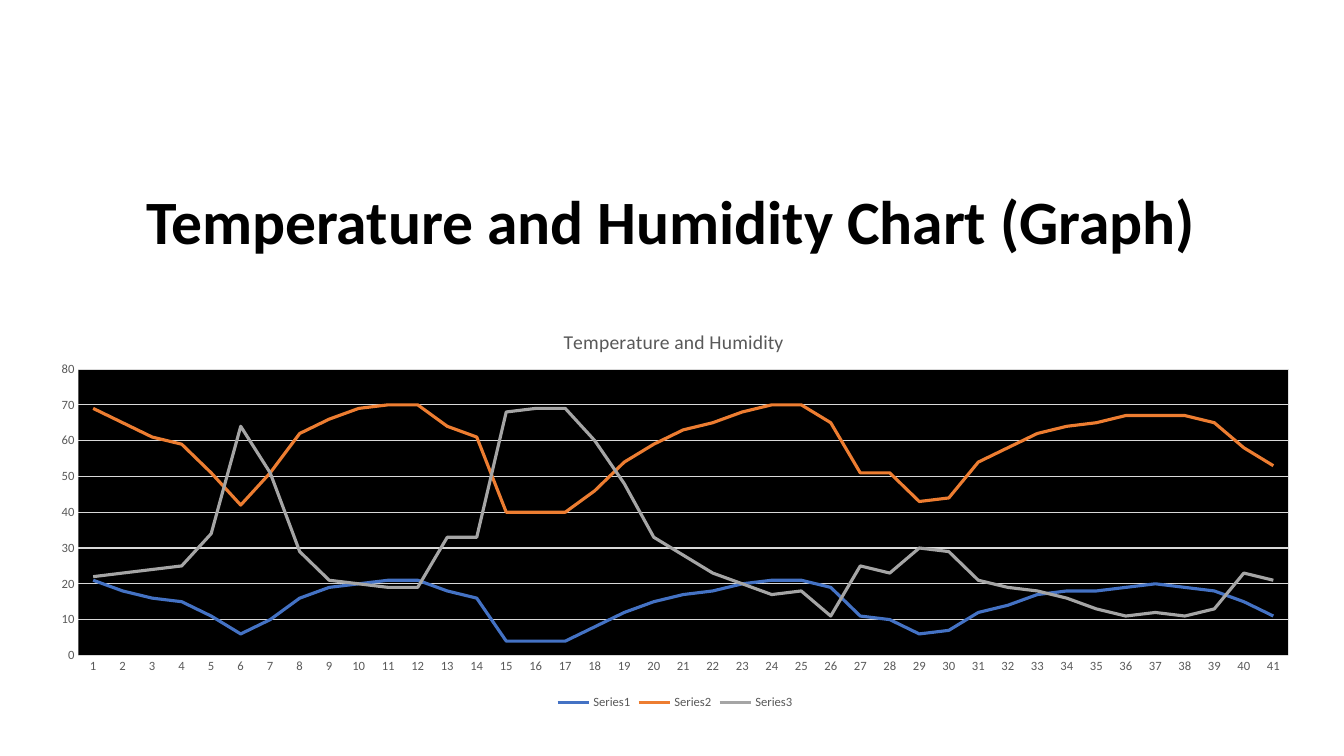
"""Build the temperature and humidity chart slide."""
from dataclasses import dataclass

from lxml import etree
from pptx import Presentation
from pptx.chart.data import CategoryChartData
from pptx.dml.color import RGBColor
from pptx.enum.chart import XL_CHART_TYPE, XL_LEGEND_POSITION, XL_TICK_MARK
from pptx.enum.text import MSO_ANCHOR, PP_ALIGN
from pptx.oxml import parse_xml
from pptx.oxml.ns import nsdecls, qn
from pptx.util import Inches, Pt

LINE_CHART = XL_CHART_TYPE.LINE
LEGEND_BOTTOM = XL_LEGEND_POSITION.BOTTOM
NO_TICK = XL_TICK_MARK.NONE
BOTTOM = MSO_ANCHOR.BOTTOM
LEFT = PP_ALIGN.LEFT


@dataclass(frozen=True)
class Theme:
    """Colours, font and type sizes of the slide."""
    font: str = "Calibri"
    heading: str = "000000"
    label: str = "595959"
    grid: str = "D9D9D9"
    plot: str = "000000"
    series: tuple = ("4472C4", "ED7D31", "A5A5A5")
    heading_size: int = 44
    chart_title_size: int = 14
    label_size: int = 9
    grid_width: float = 0.75
    series_width: float = 2.25


THEME = Theme()

READINGS = {
    "Series1": (21, 18, 16, 15, 11, 6, 10, 16, 19, 20, 21, 21, 18, 16, 4, 4, 4, 8, 12, 15, 17,
                18, 20, 21, 21, 19, 11, 10, 6, 7, 12, 14, 17, 18, 18, 19, 20, 19, 18, 15, 11),
    "Series2": (69, 65, 61, 59, 51, 42, 51, 62, 66, 69, 70, 70, 64, 61, 40, 40, 40, 46, 54, 59, 63,
                65, 68, 70, 70, 65, 51, 51, 43, 44, 54, 58, 62, 64, 65, 67, 67, 67, 65, 58, 53),
    "Series3": (22, 23, 24, 25, 34, 64, 51, 29, 21, 20, 19, 19, 33, 33, 68, 69, 69, 60, 48, 33, 28,
                23, 20, 17, 18, 11, 25, 23, 30, 29, 21, 19, 18, 16, 13, 11, 12, 11, 13, 23, 21),
}


def style_font(font, size, color, bold=False):
    """Apply the theme font with a size, colour and weight."""
    font.name = THEME.font
    font.size = Pt(size)
    font.bold = bold
    font.color.rgb = RGBColor.from_string(color)


def style_line(line, color, width):
    """Give a line a solid colour and a width in points."""
    line.color.rgb = RGBColor.from_string(color)
    line.width = Pt(width)


def add_heading(slide, text):
    """Add the slide heading, resting on the bottom of its box."""
    heading = slide.shapes.add_textbox(Inches(1.35), Inches(0.86), Inches(12.99), Inches(1.75))
    frame = heading.text_frame
    frame.word_wrap = True
    frame.vertical_anchor = BOTTOM
    paragraph = frame.paragraphs[0]
    paragraph.alignment = LEFT
    paragraph.line_spacing = 0.9
    run = paragraph.add_run()
    run.text = text
    style_font(run.font, THEME.heading_size, THEME.heading, bold=True)


def place_part(part, index, **position):
    """Set a manual layout, in fractions of the chart, on a chart part."""
    for old_layout in part.findall(qn("c:layout")):
        part.remove(old_layout)
    layout = etree.Element(qn("c:layout"))
    manual = etree.SubElement(layout, qn("c:manualLayout"))
    if "w" in position:
        etree.SubElement(manual, qn("c:layoutTarget"), val="inner")
    for axis in ("x", "y"):
        etree.SubElement(manual, qn(f"c:{axis}Mode"), val="edge")
    for key, fraction in position.items():
        etree.SubElement(manual, qn(f"c:{key}"), val=str(fraction))
    part.insert(index, layout)


def style_chart_title(chart, text):
    """Write and place the chart title."""
    chart.has_title = True
    run = chart.chart_title.text_frame.paragraphs[0].add_run()
    run.text = text
    style_font(run.font, THEME.chart_title_size, THEME.label)
    place_part(chart.chart_title._element, 1, x=0.41, y=0.05)


def style_axes(chart):
    """Style both axes and the value gridlines."""
    for axis in (chart.category_axis, chart.value_axis):
        axis.major_tick_mark = axis.minor_tick_mark = NO_TICK
        style_font(axis.tick_labels.font, THEME.label_size, THEME.label)
    style_line(chart.category_axis.format.line, THEME.grid, THEME.grid_width)
    values = chart.value_axis
    values.minimum_scale, values.maximum_scale, values.major_unit = 0, 80, 10
    values.format.line.fill.background()
    values.has_major_gridlines = True
    style_line(values.major_gridlines.format.line, THEME.grid, THEME.grid_width)


def style_plot(chart):
    """Place and fill the plot area and colour its series."""
    plot_area = chart._chartSpace.chart.plotArea
    place_part(plot_area, 0, x=0.033, y=0.158, w=0.947, h=0.7)
    plot_area.append(parse_xml(
        f'<c:spPr {nsdecls("c", "a")}><a:solidFill><a:srgbClr val="{THEME.plot}"/>'
        '</a:solidFill><a:ln><a:noFill/></a:ln></c:spPr>'))
    chart.plots[0].vary_by_categories = False
    for series, color in zip(chart.plots[0].series, THEME.series):
        series.smooth = False
        style_line(series.format.line, color, THEME.series_width)


def add_readings_chart(slide, title, readings):
    """Add the line chart of all readings."""
    data = CategoryChartData()
    count = len(next(iter(readings.values())))
    data.categories = [str(number) for number in range(1, count + 1)]
    for name, values in readings.items():
        data.add_series(name, values)
    chart = slide.shapes.add_chart(
        LINE_CHART, Inches(0.36), Inches(3.02), Inches(12.67), Inches(4.06), data).chart
    style_font(chart.font, THEME.label_size, THEME.label)
    style_chart_title(chart, title)
    style_axes(chart)
    style_plot(chart)
    chart.has_legend = True
    chart.legend.position = LEGEND_BOTTOM
    chart.legend.include_in_layout = False
    style_font(chart.legend.font, THEME.label_size, THEME.label)


def main():
    """Create the slide and save it."""
    deck = Presentation()
    deck.slide_width, deck.slide_height = Inches(13.33), Inches(7.5)
    slide = deck.slides.add_slide(deck.slide_layouts[6])
    add_heading(slide, "Temperature and Humidity Chart (Graph)")
    add_readings_chart(slide, "Temperature and Humidity", READINGS)
    deck.save("out.pptx")


if __name__ == "__main__":
    main()
